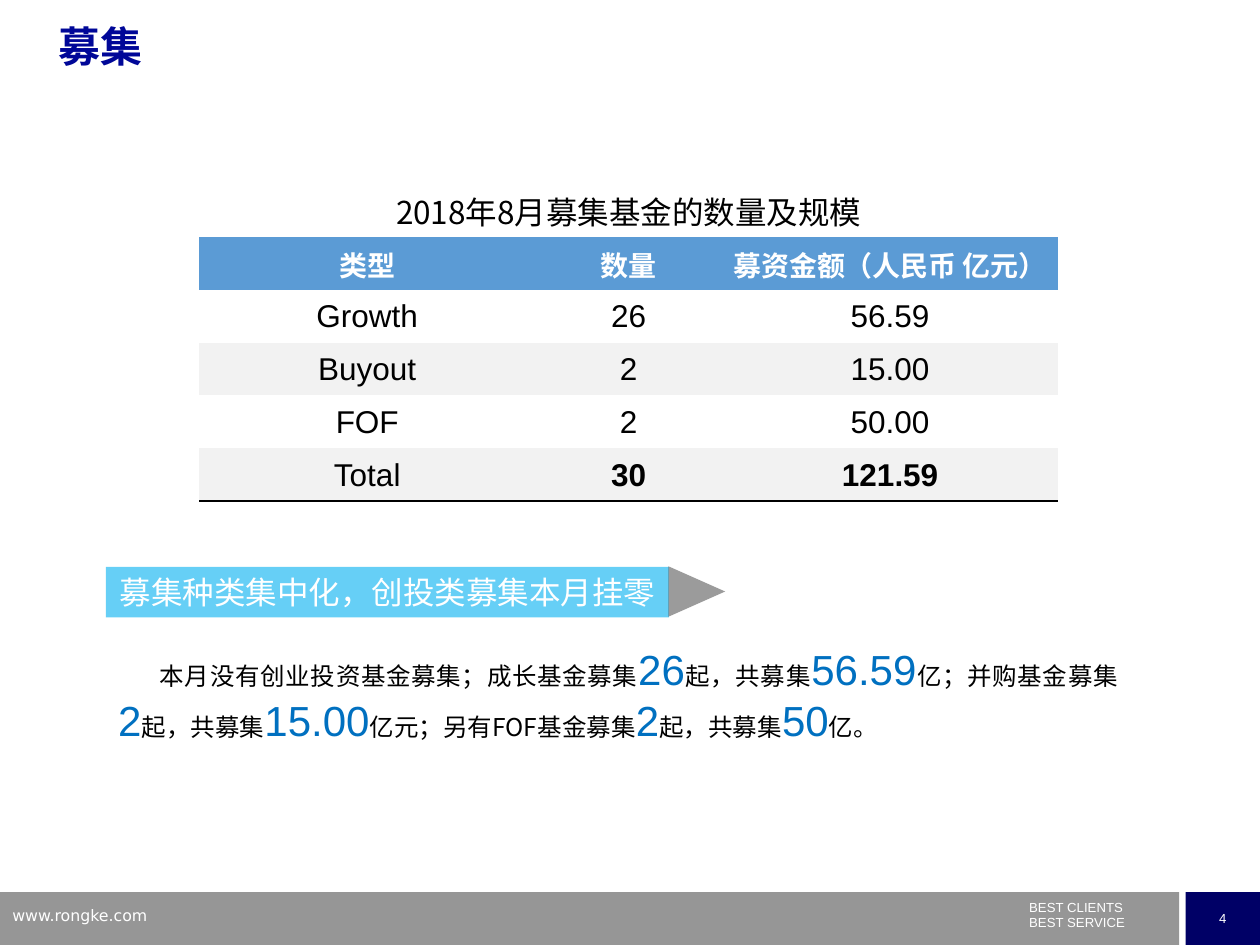
import pptx
import pptx.dml.color
import pptx.enum.shapes
import pptx.enum.text
import pptx.oxml.ns
import pptx.util
from lxml import etree

Inches = pptx.util.Inches
Pt = pptx.util.Pt
RGBColor = pptx.dml.color.RGBColor
Align = pptx.enum.text.PP_ALIGN
Anchor = pptx.enum.text.MSO_ANCHOR
Shape = pptx.enum.shapes.MSO_SHAPE
qn = pptx.oxml.ns.qn

WHITE = RGBColor(0xFF, 0xFF, 0xFF)
BLACK = RGBColor(0x00, 0x00, 0x00)
FOOTER_GRAY = RGBColor(0x96, 0x96, 0x96)
NUMBER_NAVY = RGBColor(0x00, 0x00, 0x66)
TITLE_BLUE = RGBColor(0x00, 0x07, 0x98)
FIGURE_BLUE = RGBColor(0x00, 0x70, 0xC0)
BANNER_BLUE = RGBColor(0x00, 0xB0, 0xF0)
ARROW_GRAY = RGBColor(0x59, 0x59, 0x59)
HEADER_BLUE = RGBColor(0x5B, 0x9B, 0xD5)
BAND_GRAY = RGBColor(0xF2, 0xF2, 0xF2)

CHINESE = "Noto Sans CJK SC"
CAPTION_FONT = "Noto Sans CJK JP"
PLAIN_TABLE = "{2D5ABB26-0587-4C30-8999-92F81FD0307C}"

SMALL = {"name": "Arial", "size": Pt(7.5), "color": WHITE}
ADDRESS = {"name": "DejaVu Sans", "size": Pt(9), "color": WHITE}
TITLE = {"name": "Arial", "size": Pt(24), "color": TITLE_BLUE, "bold": True}
BANNER = {"name": CHINESE, "size": Pt(18), "color": WHITE}
PROSE = {"name": CHINESE, "size": Pt(14), "color": BLACK}
FIGURE = {"name": "Arial", "size": Pt(24), "color": FIGURE_BLUE}
CAPTION = {"name": CAPTION_FONT, "size": Pt(18), "color": BLACK}
HEADER = {"name": CHINESE, "size": Pt(16), "color": WHITE, "bold": True}
CELL = {"name": "Arial", "size": Pt(18), "color": BLACK}
TOTAL = {**CELL, "bold": True}


class SlideBuilder:
    def __init__(self, page):
        self.page = page

    def span(self, para, text, style):
        span = para.add_run()
        span.text = text
        for key, value in style.items():
            if key == "color":
                span.font.color.rgb = value
            else:
                setattr(span.font, key, value)
        east_asian = style["name"] if "CJK" in style["name"] else CHINESE
        etree.SubElement(span.font._element, qn("a:ea"), typeface=east_asian)

    def paragraph(self, para, spans, **layout):
        for key, value in layout.items():
            setattr(para, key, value)
        for text, style in spans:
            self.span(para, text, style)

    def text(self, left, top, width, height, spans, **layout):
        box = self.page.shapes.add_textbox(
            Inches(left), Inches(top), Inches(width), Inches(height))
        box.text_frame.word_wrap = True
        self.paragraph(box.text_frame.paragraphs[0], spans, **layout)
        return box.text_frame

    def shape(self, kind, left, top, width, height, color, opacity=None, spans=()):
        shape = self.page.shapes.add_shape(
            kind, Inches(left), Inches(top), Inches(width), Inches(height))
        shape.shadow.inherit = False
        shape.line.fill.background()
        shape.fill.solid()
        shape.fill.fore_color.rgb = color
        if opacity:
            tint = shape._element.spPr.find(".//" + qn("a:srgbClr"))
            etree.SubElement(tint, qn("a:alpha"), val=str(opacity * 1000))
        frame = shape.text_frame
        frame.word_wrap = False
        frame.vertical_anchor = Anchor.MIDDLE
        self.paragraph(frame.paragraphs[0], spans, alignment=Align.CENTER)
        return shape

    def cell(self, cell, text, style, color=None):
        margins = {"margin_left": 0.01, "margin_right": 0.01,
                   "margin_top": 0.01, "margin_bottom": 0}
        for key, value in margins.items():
            setattr(cell, key, Inches(value))
        cell.vertical_anchor = Anchor.MIDDLE
        if color is None:
            cell.fill.background()
        else:
            cell.fill.solid()
            cell.fill.fore_color.rgb = color
        self.paragraph(cell.text_frame.paragraphs[0], [(text, style)],
                       alignment=Align.CENTER)

    def bottom_border(self, cell, color, width):
        line = etree.Element(qn("a:lnB"), w=str(width))
        fill = etree.SubElement(line, qn("a:solidFill"))
        etree.SubElement(fill, qn("a:srgbClr"), val=str(color))
        cell._tc.get_or_add_tcPr().insert(0, line)

    def table(self, left, top, widths, row_height, caption, header, rows):
        table = self.page.shapes.add_table(
            len(rows) + 2, len(widths), Inches(left), Inches(top),
            Inches(sum(widths)), Inches(row_height * (len(rows) + 2))).table
        table.first_row = table.horz_banding = False
        table._tbl.tblPr.find(qn("a:tableStyleId")).text = PLAIN_TABLE
        for column, width in zip(table.columns, widths):
            column.width = Inches(width)
        for row in table.rows:
            row.height = Inches(row_height)
        table.cell(0, 0).merge(table.cell(0, len(widths) - 1))
        self.cell(table.cell(0, 0), caption, CAPTION)
        for column, label in enumerate(header):
            self.cell(table.cell(1, column), label, HEADER, HEADER_BLUE)
        for index, values in enumerate(rows):
            last = index == len(rows) - 1
            for column, value in enumerate(values):
                cell = table.cell(index + 2, column)
                style = TOTAL if last and column else CELL
                self.cell(cell, value, style, BAND_GRAY if index % 2 else None)
                if last:
                    self.bottom_border(cell, BLACK, Pt(1))


def main():
    deck = pptx.Presentation()
    deck.slide_width, deck.slide_height = Inches(10), Inches(7.5)
    page = deck.slides.add_slide(deck.slide_layouts[6])
    builder = SlideBuilder(page)

    builder.shape(Shape.RECTANGLE, 0, 7.08, 9.36, 0.42, FOOTER_GRAY)
    builder.shape(Shape.RECTANGLE, 9.41, 7.08, 0.59, 0.42, NUMBER_NAVY,
                  spans=[("4", SMALL)])
    motto = builder.text(8.07, 7.14, 1.5, 0.29, [("BEST CLIENTS", SMALL)],
                         line_spacing=0.5)
    builder.paragraph(motto.add_paragraph(), [("BEST SERVICE", SMALL)],
                      line_spacing=0.5, space_before=Pt(4.3))
    builder.text(0, 7.14, 2.4, 0.26, [("www.rongke.com", ADDRESS)])

    summary = ["本月没有创业投资基金募集；成长基金募集", "26", "起，共募集", "56.59",
               "亿；并购基金募集", "2", "起，共募集", "15.00",
               "亿元；另有FOF基金募集", "2", "起，共募集", "50", "亿。"]
    spans = [(text, FIGURE if index % 2 else PROSE)
             for index, text in enumerate(summary)]
    frame = builder.text(0.84, 5.06, 8.13, 0.91, spans, alignment=Align.JUSTIFY)
    frame.paragraphs[0]._p.get_or_add_pPr().set("indent", str(Inches(0.33)))

    builder.shape(Shape.RECTANGLE, 0.84, 4.5, 4.47, 0.4, BANNER_BLUE, 60,
                  [("募集种类集中化，创投类募集本月挂零", BANNER)])
    arrow = builder.shape(Shape.ISOSCELES_TRIANGLE, 5.33, 4.47, 0.4, 0.45,
                          ARROW_GRAY, 60)
    arrow.rotation = 90

    builder.text(0.37, 0.16, 9, 0.7, [("募集", TITLE)], line_spacing=0.9)
    builder.table(1.58, 1.46, [2.67, 1.48, 2.67], 0.42,
                  "2018年8月募集基金的数量及规模",
                  ["类型", "数量", "募资金额（人民币 亿元）"],
                  [["Growth", "26", "56.59"],
                   ["Buyout", "2", "15.00"],
                   ["FOF", "2", "50.00"],
                   ["Total", "30", "121.59"]])
    deck.save("out.pptx")


if __name__ == "__main__":
    main()
